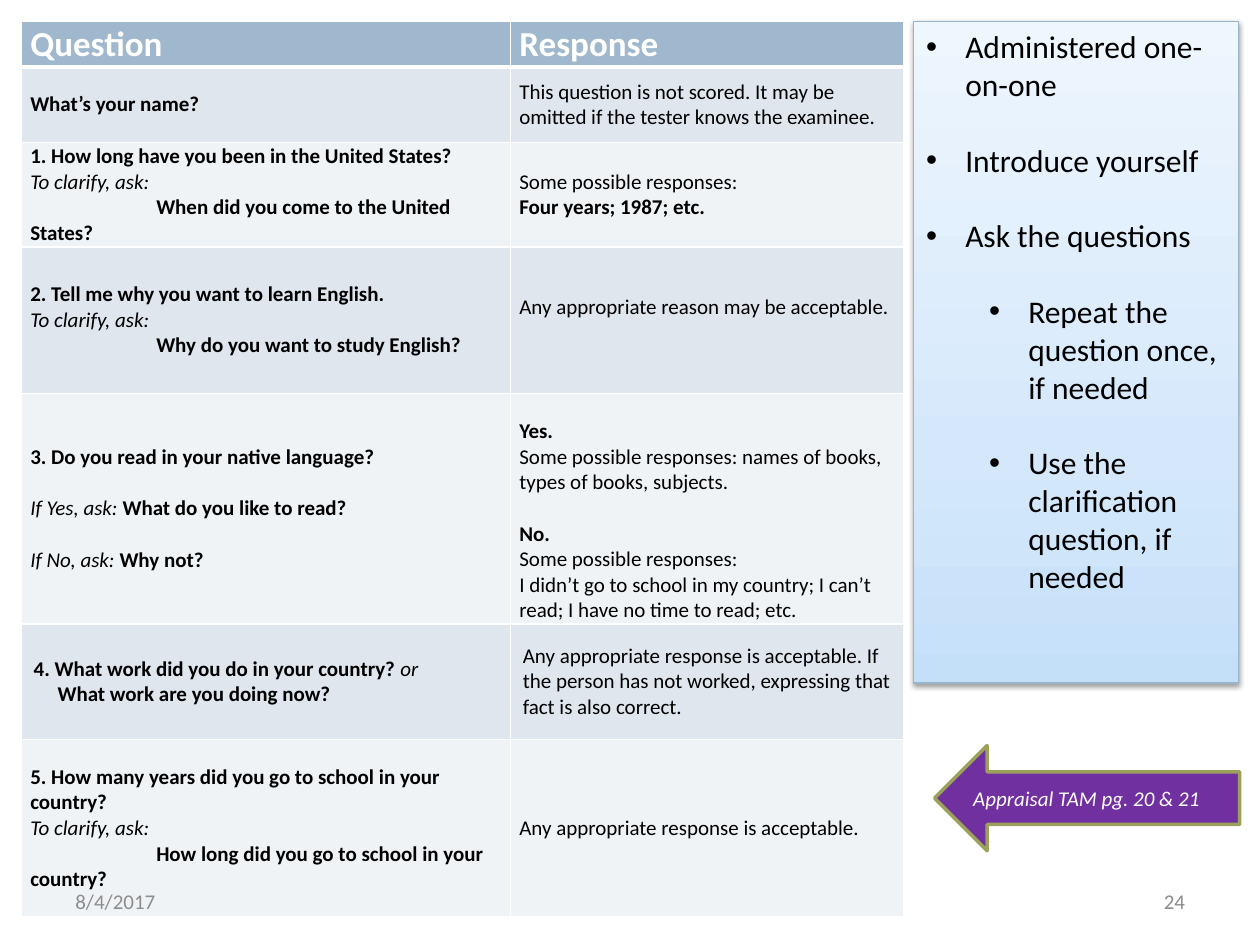
from lxml.etree import SubElement
from pptx import Presentation
from pptx.dml.color import RGBColor
from pptx.enum.shapes import MSO_SHAPE
from pptx.enum.text import MSO_ANCHOR, PP_ALIGN
from pptx.oxml import parse_xml
from pptx.oxml.ns import nsdecls, qn
from pptx.util import Cm, Pt


def rgb(code):
    return RGBColor.from_string(code)


def write(paragraph, text, size=12, color="000000", bold=False, italic=False):
    """Append one formatted run to the paragraph."""
    run = paragraph.add_run()
    run.text = text
    font = run.font
    font.name, font.size, font.bold, font.italic = "Calibri", Pt(size), bold, italic
    font.color.rgb = rgb(color)


deck = Presentation()
deck.slide_width, deck.slide_height = Cm(25.4), Cm(19.05)
slide = deck.slides.add_slide(deck.slide_layouts[6])
shapes = slide.shapes

# Interview table: a cell is a list of paragraphs, a paragraph a list of
# (text, style) runs, where style is "b" bold, "i" italic or "" plain.
clarify = [("To clarify, ask:", "i")]
rows = [
    (1.52,
     [[("What’s your name?", "b")]],
     [[("This question is not scored. It may be omitted if the tester knows the examinee.", "")]]),
    (2.11,
     [[("1. How long have you been in the United States?", "b")],
      clarify,
      [("When did you come to the United States?", "b")]],
     [[("Some possible responses:", "")],
      [("Four years; 1987; etc.", "b")]]),
    (2.95,
     [[("2. Tell me why you want to learn English.", "b")],
      clarify,
      [("Why do you want to study English?", "b")]],
     [[("Any appropriate reason may be acceptable.", "")]]),
    (4.65,
     [[("3. Do you read in your native language?", "b")],
      [("If Yes, ask: ", "i"), ("What do you like to read?", "b")],
      [("If No, ask: ", "i"), ("Why not?", "b")]],
     [[("Yes.", "b")],
      [("Some possible responses: names of books, types of books, subjects.", "")],
      [("No.", "b")],
      [("Some possible responses:", "")],
      [("I didn’t go to school in my country; I can’t read; I have no time to read; etc.", "")]]),
    (2.33,
     [[("4. What work did you do in your country? ", "b"), ("or", "i")],
      [("What work are you doing now?", "b")]],
     [[("Any appropriate response is acceptable. If the person has not worked, "
        "expressing that fact is also correct.", "")]]),
    (3.58,
     [[("5. How many years did you go to school in your country?", "b")],
      clarify,
      [("How long did you go to school in your country?", "b")]],
     [[("Any appropriate response is acceptable.", "")]]),
]
header_height = 0.92
table_height = header_height + sum(row[0] for row in rows)
interview = shapes.add_table(len(rows) + 1, 2, Cm(0.43), Cm(0.43), Cm(17.78), Cm(table_height)).table
for column, width in zip(interview.columns, (9.86, 7.92)):
    column.width = Cm(width)
interview.rows[0].height = Cm(header_height)

for r in range(len(rows) + 1):
    for c in range(2):
        cell = interview.cell(r, c)
        cell.vertical_anchor = MSO_ANCHOR.MIDDLE
        cell.margin_left = cell.margin_right = Cm(0.25 if r == 5 else 0.18)
        cell.margin_top = cell.margin_bottom = 0
        borders = cell._tc.get_or_add_tcPr()
        for side in ("lnL", "lnR", "lnT", "lnB"):
            thick = (r, side) in ((0, "lnB"), (1, "lnT"))
            edge = SubElement(borders, qn(f"a:{side}"), w=str(Pt(3 if thick else 1)))
            SubElement(SubElement(edge, qn("a:solidFill")), qn("a:srgbClr"), val="FFFFFF")
        cell.fill.solid()
        cell.fill.fore_color.rgb = rgb("9FB8CD" if r == 0 else "DFE6ED" if r % 2 else "F0F3F6")
        frame = cell.text_frame
        if r == 0:
            write(frame.paragraphs[0], ("Question", "Response")[c], size=20, color="FFFFFF", bold=True)
            continue
        height, *columns = rows[r - 1]
        interview.rows[r].height = Cm(height)
        for n, runs in enumerate(columns[c]):
            paragraph = frame.add_paragraph() if n else frame.paragraphs[0]
            if n and columns[c][n - 1] is clarify:
                paragraph._p.get_or_add_pPr().set("indent", str(Cm(2.54)))
            for text, style in runs:
                write(paragraph, text, bold=style == "b", italic=style == "i")

interview.cell(3, 1).margin_bottom = Cm(0.5)
interview.cell(4, 1).margin_top = Cm(0.5)
interview.cell(5, 0).text_frame.paragraphs[1]._p.get_or_add_pPr().set("marL", str(Cm(0.48)))
native_language, reading = (interview.cell(4, c).text_frame.paragraphs for c in range(2))
for paragraph in (*native_language[1:], reading[2]):
    paragraph.space_before = Pt(14.6)

# Footer
for left, text, align in ((1.27, "8/4/2017", PP_ALIGN.LEFT), (18.21, "24", PP_ALIGN.RIGHT)):
    footer = shapes.add_textbox(Cm(left), Cm(17.65), Cm(5.93), Cm(1.02)).text_frame
    footer.word_wrap = True
    footer.vertical_anchor = MSO_ANCHOR.MIDDLE
    footer.paragraphs[0].alignment = align
    write(footer.paragraphs[0], text, color="8C8C8C")

# Instructions panel
panel = shapes.add_shape(MSO_SHAPE.RECTANGLE, Cm(18.42), Cm(0.43), Cm(6.55), Cm(13.34))
panel.line.color.rgb = rgb("9AB4CA")
panel.line.width = Pt(0.75)
panel.shadow.inherit = False
panel_format = panel._element.spPr
stops = "".join(
    f'<a:gs pos="{position}000"><a:srgbClr val="{color}"/></a:gs>'
    for position, color in ((0, "C4E0F9"), (35, "D5E8FB"), (100, "EEF6FE")))
panel_format.find(qn("a:ln")).addprevious(parse_xml(
    f'<a:gradFill {nsdecls("a")} rotWithShape="1"><a:gsLst>{stops}</a:gsLst>'
    '<a:lin ang="16200000" scaled="0"/></a:gradFill>'))
panel_format.find(qn("a:effectLst")).append(parse_xml(
    f'<a:outerShdw {nsdecls("a")} blurRad="40000" dist="20000" dir="5400000" rotWithShape="0">'
    '<a:srgbClr val="000000"><a:alpha val="38000"/></a:srgbClr></a:outerShdw>'))
instructions = panel.text_frame
instructions.word_wrap = True
instructions.vertical_anchor = MSO_ANCHOR.TOP
steps = [
    (0, "Administered one-on-one"),
    (0, "Introduce yourself"),
    (0, "Ask the questions"),
    (1, "Repeat the question once, if needed"),
    (1, "Use the clarification question, if needed"),
]
for n, (level, text) in enumerate(steps):
    paragraph = instructions.add_paragraph() if n else instructions.paragraphs[0]
    paragraph.alignment = PP_ALIGN.LEFT
    paragraph.level = level
    if n:
        paragraph.space_before = Pt(21.6)
    indents = paragraph._p.get_or_add_pPr()
    indents.set("marL", str(Cm(0.79 + 1.27 * level)))
    indents.set("indent", str(Cm(-0.79)))
    SubElement(indents, qn("a:buFont"), typeface="Arial")
    SubElement(indents, qn("a:buChar"), char="•")
    write(paragraph, text, size=18)

# Page reference
reference = shapes.add_shape(MSO_SHAPE.LEFT_ARROW, Cm(18.84), Cm(15.03), Cm(6.15), Cm(2.12))
reference.shadow.inherit = False
reference.fill.solid()
reference.fill.fore_color.rgb = rgb("7030A0")
reference.line.color.rgb = rgb("9BA15A")
reference.line.width = Pt(2)
reference.text_frame.word_wrap = True
reference.text_frame.vertical_anchor = MSO_ANCHOR.MIDDLE
reference.text_frame.paragraphs[0].alignment = PP_ALIGN.LEFT
write(reference.text_frame.paragraphs[0], "Appraisal TAM pg. 20 & 21", color="FFFFFF", italic=True)

deck.save("out.pptx")
